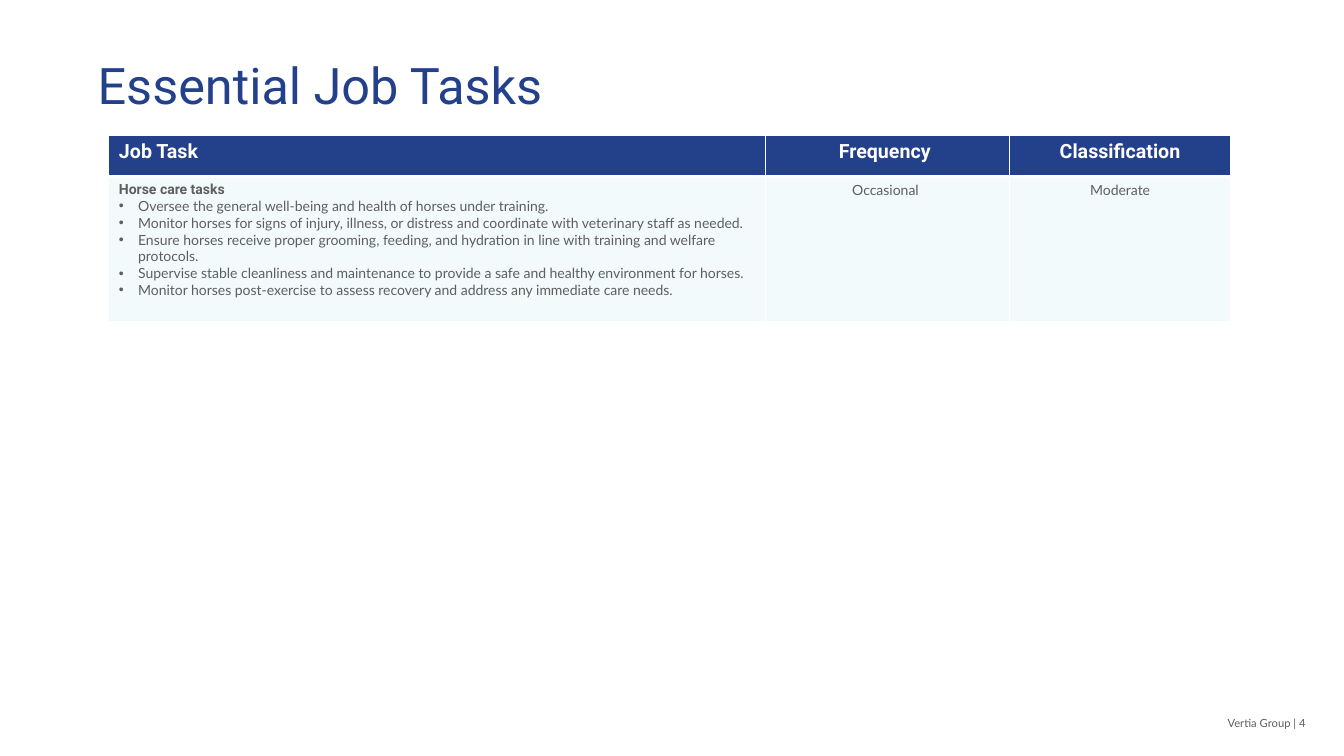
from lxml import etree
from pptx import Presentation
from pptx import util as u
from pptx.dml.color import RGBColor
from pptx.enum import text
from pptx.oxml import ns

NAVY, GREY, WHITE, TEAL = "23408B", "5E5E5E", "FFFFFF", "24A8C0"
LEFT, MID, RIGHT = text.PP_ALIGN.LEFT, text.PP_ALIGN.CENTER, text.PP_ALIGN.RIGHT


def color(code):
    return RGBColor.from_string(code)


class Page:
    head, body = "Roboto", "Lato"

    def __init__(self, deck):
        self.slide = deck.slides.add_slide(deck.slide_layouts[6])

    def style(self, para, font, size, tint, align=LEFT, bold=False):
        para.alignment = align
        for run in para.runs:
            run.font.name = font
            run.font.size = u.Pt(size)
            run.font.bold = bold
            run.font.color.rgb = color(tint)

    def label(self, words, box, font, size, tint, align=LEFT):
        frame = self.slide.shapes.add_textbox(*map(u.Inches, box)).text_frame
        frame.word_wrap = True
        frame.text = words
        self.style(frame.paragraphs[0], font, size, tint, align)

    def bullet(self, para):
        props = para._p.get_or_add_pPr()
        props.set("marL", str(u.Inches(0.19)))
        props.set("indent", str(-u.Inches(0.19)))
        etree.SubElement(props, ns.qn("a:buFont"), typeface="Arial")
        etree.SubElement(props, ns.qn("a:buChar"), char="•")

    def border(self, cell, widths):
        props = cell._tc.get_or_add_tcPr()
        for spot, (side, width) in enumerate(zip("LRTB", widths)):
            line = etree.Element(ns.qn(f"a:ln{side}"), w=str(u.Pt(width)))
            fill = etree.SubElement(line, ns.qn("a:solidFill"))
            etree.SubElement(fill, ns.qn("a:srgbClr"), val=WHITE)
            props.insert(spot, line)

    def cell(self, cell, lines, fill, widths, alpha=100):
        cell.text = "\n".join(lines)
        cell.fill.solid()
        cell.fill.fore_color.rgb = color(fill)
        if alpha < 100:
            tone = cell._tc.tcPr.find(".//" + ns.qn("a:srgbClr"))
            etree.SubElement(tone, ns.qn("a:alpha"), val=str(alpha * 1000))
        self.border(cell, widths)
        return cell.text_frame.paragraphs

    def table(self, box, cols, rows, heads, cells):
        grid = self.slide.shapes.add_table(
            2, len(cols), *map(u.Inches, box)).table
        for row, high in zip(grid.rows, rows):
            row.height = u.Inches(high)
        for i, wide in enumerate(cols):
            grid.columns[i].width = u.Inches(wide)
            align = MID if i else LEFT
            # Header cell
            title = self.cell(grid.cell(0, i), [heads[i]], NAVY, (1, 1, 1, 3))
            self.style(title[0], self.head, 14, WHITE, align, True)
            # Body cell: the task column has a bold lead and bullets
            paras = self.cell(grid.cell(1, i), cells[i], TEAL, (1, 1, 3, 1), 5)
            for n, para in enumerate(paras):
                lead = i == 0 and n == 0
                if n:
                    self.bullet(para)
                font = self.head if lead else self.body
                self.style(para, font, 10, GREY, align, lead)


def main():
    deck = Presentation()
    deck.slide_width, deck.slide_height = u.Inches(13.33), u.Inches(7.5)
    page = Page(deck)

    # Footer and title
    page.label("Vertia Group | 4", (6.38, 7.06, 6.67, 0.24),
               page.body, 8, GREY, RIGHT)
    page.label("Essential Job Tasks", (0.87, 0.49, 6.67, 0.71),
               page.head, 36, NAVY)

    # Task table
    tasks = [
        "Horse care tasks",
        "Oversee the general well-being and health of horses under training.",
        "Monitor horses for signs of injury, illness, or distress and "
        "coordinate with veterinary staff as needed.",
        "Ensure horses receive proper grooming, feeding, and hydration in "
        "line with training and welfare protocols.",
        "Supervise stable cleanliness and maintenance to provide a safe and "
        "healthy environment for horses.",
        "Monitor horses post-exercise to assess recovery and address any "
        "immediate care needs.",
    ]
    page.table((1.08, 1.34, 11.13, 1.85), (6.51, 2.42, 2.2), (0.41, 1.44),
               ("Job Task", "Frequency ", "Classification"),
               (tasks, ["Occasional "], ["Moderate"]))

    deck.save("out.pptx")


if __name__ == "__main__":
    main()
